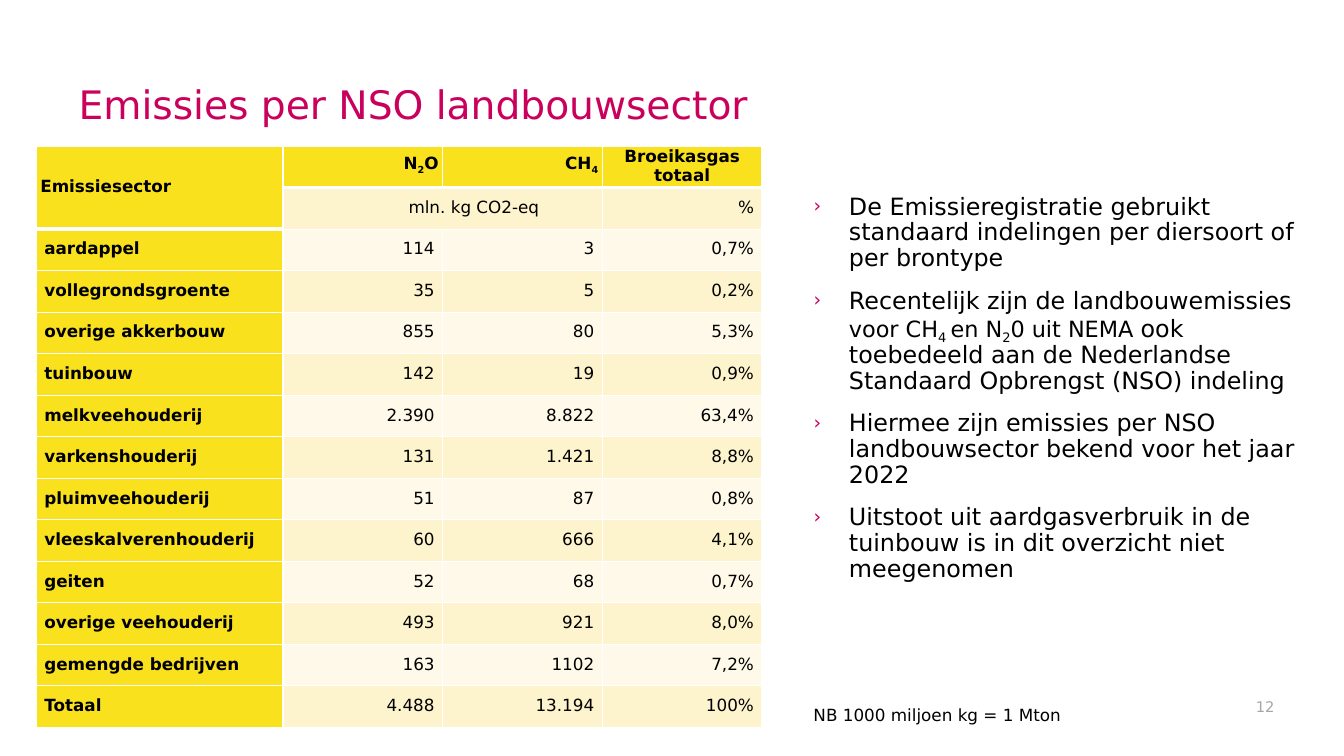
from lxml import etree
from pptx import Presentation
from pptx import util as u
from pptx.dml.color import RGBColor
from pptx.enum import text
from pptx.oxml.ns import qn

# Content: text between bars is set as subscript
TITLE = "Emissies per NSO landbouwsector"
HEADINGS = ["Emissiesector", "N|2|O", "CH|4|", "Broeikasgas totaal"]
UNITS = ["", "mln. kg CO2-eq", "", "%"]
SECTORS = [
    ("aardappel", "114", "3", "0,7%"),
    ("vollegrondsgroente", "35", "5", "0,2%"),
    ("overige akkerbouw", "855", "80", "5,3%"),
    ("tuinbouw", "142", "19", "0,9%"),
    ("melkveehouderij", "2.390", "8.822", "63,4%"),
    ("varkenshouderij", "131", "1.421", "8,8%"),
    ("pluimveehouderij", "51", "87", "0,8%"),
    ("vleeskalverenhouderij", "60", "666", "4,1%"),
    ("geiten", "52", "68", "0,7%"),
    ("overige veehouderij", "493", "921", "8,0%"),
    ("gemengde bedrijven", "163", "1102", "7,2%"),
    ("Totaal", "4.488", "13.194", "100%"),
]
BULLETS = [
    [("De Emissieregistratie gebruikt standaard indelingen per diersoort of per brontype", 17)],
    [("Recentelijk zijn de landbouwemissies ", 17),
     ("voor CH|4 |en N|2|0 uit NEMA ", 16),
     ("ook toebedeeld aan de Nederlandse Standaard Opbrengst (NSO) indeling", 17)],
    [("Hiermee zijn emissies per NSO landbouwsector bekend voor het jaar 2022", 17)],
    [("Uitstoot uit aardgasverbruik in de tuinbouw is in dit overzicht niet meegenomen", 17)],
]
NOTE = "NB 1000 miljoen kg = 1 Mton"
PAGE_NUMBER = "12"

# Format
FONT = "DejaVu Sans"
BLACK = RGBColor(0, 0, 0)
WHITE = RGBColor(0xFF, 0xFF, 0xFF)
MAGENTA = RGBColor(0xCA, 0x00, 0x5D)
GREY = RGBColor(0xA6, 0xA6, 0xA6)
YELLOW = RGBColor(0xF9, 0xE1, 0x1E)
BANDS = [RGBColor(0xFE, 0xF9, 0xE8), RGBColor(0xFD, 0xF4, 0xCD)]
LEFT, CENTER, RIGHT = text.PP_ALIGN.LEFT, text.PP_ALIGN.CENTER, text.PP_ALIGN.RIGHT

# Places in percent of the slide: left, top, width, height
TABLE_AREA = (2.7, 19.33, 54, 76.93)
BODY_AREA = (59.79, 25.07, 39.23, 61.2)
TITLE_AREA = (5.1, 3.73, 89.65, 13.87)
NUMBER_AREA = (91.67, 90.67, 3.15, 4.67)
NOTE_AREA = (59.79, 92.53, 20.41, 4)
COLUMN_SHARES = [0.34, 0.22, 0.22, 0.22]

deck = Presentation()
deck.slide_width, deck.slide_height = u.Inches(13.33), u.Inches(7.5)
page = deck.slides.add_slide(deck.slide_layouts[1])


def area(shares):
    sides = (deck.slide_width, deck.slide_height) * 2
    return [int(side * share / 100) for side, share in zip(sides, shares)]


def assign(target, **values):
    for name, value in values.items():
        setattr(target, name, value)


def write(para, words, size, color=BLACK, bold=False):
    for index, part in enumerate(words.split("|")):
        if part:
            span = para.add_run()
            span.text = part
            assign(span.font, name=FONT, size=u.Pt(size), bold=bold)
            span.font.color.rgb = color
            if index % 2:
                span.font._element.set("baseline", "-25000")


def place(shape, shares):
    assign(shape, **dict(zip(("left", "top", "width", "height"), area(shares))))
    assign(shape.text_frame, word_wrap=True, auto_size=text.MSO_AUTO_SIZE.NONE)
    return shape.text_frame


def indent(para, left, **others):
    props = para._p.get_or_add_pPr()
    for name, value in dict(marL=left, **others).items():
        props.set(name, str(int(u.Inches(value))))
    return props


def add_borders(cell, row, column):
    head_end = 1 if column == 0 else 0
    widths = {"a:lnL": 1, "a:lnR": 1,
              "a:lnT": 3 if row == head_end + 1 else 1,
              "a:lnB": 3 if row <= head_end else 1}
    props = cell._tc.get_or_add_tcPr()
    for position, (tag, width) in enumerate(widths.items()):
        line = etree.Element(qn(tag), w=str(u.Pt(width)))
        fill = etree.SubElement(line, qn("a:solidFill"))
        etree.SubElement(fill, qn("a:srgbClr"), val=str(WHITE))
        props.insert(position, line)


# Title
title = place(page.shapes.title, TITLE_AREA)
title.vertical_anchor = text.MSO_ANCHOR.BOTTOM
assign(title.paragraphs[0], alignment=LEFT, line_spacing=0.9)
write(title.paragraphs[0], TITLE, 28, MAGENTA)

# Emission table
rows = [HEADINGS, UNITS, *SECTORS]
left, top, width, height = area(TABLE_AREA)
table = page.shapes.add_table(len(rows), len(HEADINGS), left, top, width, height).table
for column, share in zip(table.columns, COLUMN_SHARES):
    column.width = int(width * share)
for row in table.rows:
    row.height = height // len(rows)
table.cell(0, 0).merge(table.cell(1, 0))
table.cell(1, 1).merge(table.cell(1, 2))

for r, values in enumerate(rows):
    for c, words in enumerate(values):
        cell = table.cell(r, c)
        strong = r == 0 or c == 0
        assign(cell, vertical_anchor=text.MSO_ANCHOR.MIDDLE, margin_top=0, margin_bottom=0,
               margin_left=u.Inches(0.04), margin_right=u.Inches(0.04))
        cell.fill.solid()
        cell.fill.fore_color.rgb = YELLOW if strong else BANDS[r % 2]
        add_borders(cell, r, c)
        if words:
            para = cell.text_frame.paragraphs[0]
            centered = (r, c) in [(0, 3), (1, 1)]
            assign(para, line_spacing=u.Pt(13),
                   alignment=CENTER if centered else LEFT if c == 0 else RIGHT)
            if r > 0:
                indent(para, 0.66 if centered else 0.04, marR=0.04)
            write(para, words, 12, bold=strong)

# Explanation list
body = place(page.placeholders[1], BODY_AREA)
for index, parts in enumerate(BULLETS):
    para = body.paragraphs[0] if index == 0 else body.add_paragraph()
    assign(para, line_spacing=0.9, space_before=u.Pt(12 if index else 0))
    props = indent(para, 0.35, indent=-0.35)
    color = etree.SubElement(props, qn("a:buClr"))
    etree.SubElement(color, qn("a:srgbClr"), val=str(MAGENTA))
    etree.SubElement(props, qn("a:buSzPct"), val="80000")
    etree.SubElement(props, qn("a:buFont"), typeface=FONT)
    etree.SubElement(props, qn("a:buChar"), char="›")
    for words, size in parts:
        write(para, words, size)

# Page number and note
number = place(page.shapes.add_textbox(0, 0, 0, 0), NUMBER_AREA)
assign(number, vertical_anchor=text.MSO_ANCHOR.BOTTOM, margin_right=0)
number.paragraphs[0].alignment = RIGHT
write(number.paragraphs[0], PAGE_NUMBER, 10.5, GREY)

note = place(page.shapes.add_textbox(0, 0, 0, 0), NOTE_AREA)
note.word_wrap = False
write(note.paragraphs[0], NOTE, 12)

deck.save("out.pptx")
